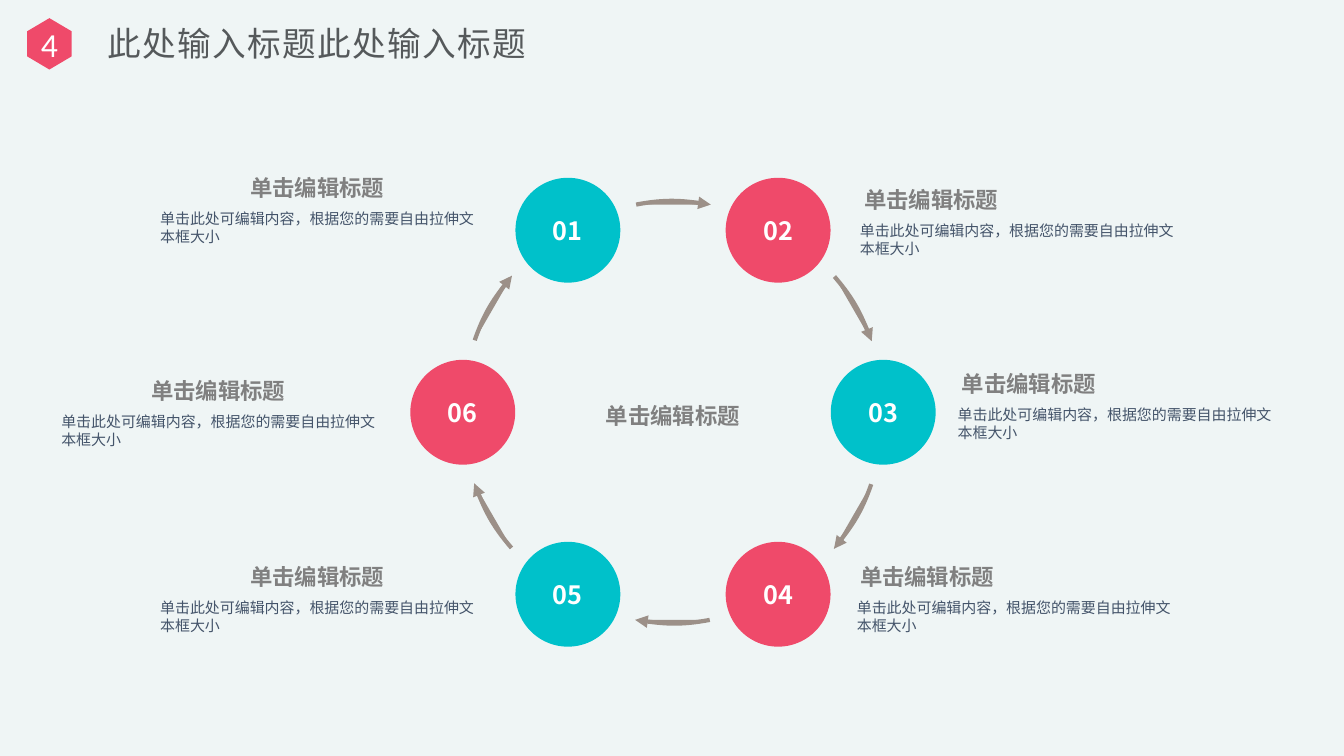
from math import cos, sin, radians
from pptx import Presentation
from pptx.dml.color import RGBColor
from pptx.enum.shapes import MSO_SHAPE as Preset
from pptx.enum.text import MSO_ANCHOR as Anchor, PP_ALIGN as Align
from pptx.oxml import parse_xml
from pptx.oxml.ns import nsdecls, qn
from pptx.util import Inches, Pt

WIDTH, HEIGHT = 13.33, 7.5
SANS = "Noto Sans CJK SC"
PAPER, RED, TEAL, TAUPE = "EFF5F5", "EF4A6A", "00C1CA", "9C9088"
DARK, GREY, NAVY, WHITE = "55595B", "808080", "44546A", "FFFFFF"

section = "4"
headline = "此处输入标题此处输入标题"
heading = "单击编辑标题"
detail = "单击此处可编辑内容，根据您的需要自由拉伸文本框大小"
steps = [
    ("01", TEAL, 1.49, 2.03, 0.86),
    ("02", RED, 8.43, 2.15, 0.01),
    ("03", TEAL, 9.4, 3.97, 0.01),
    ("04", RED, 8.4, 5.89, 0),
    ("05", TEAL, 1.49, 5.89, 0.86),
    ("06", RED, 0.51, 4.04, 0.86),
]
ring_x, ring_y, ring_radius, disc = WIDTH / 2 + 0.01, 4.09, 2.085, 1.04
turn = 360 / len(steps)
arrow_curve = [(-0.365, -2.06), (-0.055, -2.12), (0.255, -2.08), (0.375, -2.06)]
hexagon = [(0.49, 0.18), (0.71, 0.31), (0.71, 0.56),
           (0.49, 0.69), (0.27, 0.56), (0.27, 0.31)]

deck = Presentation()
deck.slide_width, deck.slide_height = Inches(WIDTH), Inches(HEIGHT)
slide = deck.slides.add_slide(deck.slide_layouts[6])
shapes = slide.shapes


def paint(target, color):
    target.solid()
    target.fore_color.rgb = RGBColor.from_string(color)


def write(shape, text, size, color, bold=False, font=SANS, align=Align.LEFT,
          anchor=Anchor.MIDDLE, insets=(0, 0, 0, 0)):
    frame = shape.text_frame
    frame.word_wrap = True
    frame.vertical_anchor = anchor
    (frame.margin_left, frame.margin_top,
     frame.margin_right, frame.margin_bottom) = map(Inches, insets)
    paragraph = frame.paragraphs[0]
    paragraph.alignment = align
    run = paragraph.add_run()
    run.text = text
    run.font.size, run.font.bold, run.font.name = Pt(size), bold, font
    run.font.color.rgb = RGBColor.from_string(color)
    return run


def box(x, y, w, h):
    return shapes.add_textbox(*map(Inches, (x, y, w, h)))


def outline(points, color, close):
    spots = [(Inches(x), Inches(y)) for x, y in points]
    builder = shapes.build_freeform(*spots[0])
    builder.add_line_segments(spots[1:], close=close)
    shape = builder.convert_to_shape()
    shape.shadow.inherit = False
    paint(shape.fill, color)
    shape.line.fill.background()
    return shape


def arrow(angle):
    c, s = cos(radians(angle)), sin(radians(angle))
    shape = outline([(ring_x + x * c - y * s, ring_y + x * s + y * c)
                     for x, y in arrow_curve], TAUPE, False)
    route = shape._element.spPr.find(".//" + qn("a:path"))
    curve = parse_xml(f"<a:cubicBezTo {nsdecls('a')}/>")
    for segment in route.findall(qn("a:lnTo")):
        curve.append(segment[0])
        route.remove(segment)
    route.append(curve)
    paint(shape.line.fill, TAUPE)
    shape.line.width = Pt(3)
    shape.line._get_or_add_ln().append(
        parse_xml(f'<a:tailEnd {nsdecls("a")} type="triangle"/>'))


paint(slide.background.fill, PAPER)
title = write(box(0.87, 0.13, 5.09, 0.59), headline, 24, DARK,
              insets=(0.2, 0.05, 0.1, 0.05))
title._r.get_or_add_rPr().set("spc", "100")
write(outline(hexagon, RED, True), section, 24, WHITE, font="Calibri", align=Align.CENTER)
write(box(ring_x - 1.145, ring_y - 1.11, 2.29, 2.29), heading, 16, GREY, True,
      align=Align.CENTER)

for index, (number, color, x, y, heading_shift) in enumerate(steps):
    arrow(index * turn)
    angle = radians(index * turn - 120)
    circle = shapes.add_shape(Preset.OVAL, *map(Inches, (
        ring_x + ring_radius * cos(angle) - disc / 2,
        ring_y + ring_radius * sin(angle) - disc / 2, disc, disc)))
    circle.shadow.inherit = False
    paint(circle.fill, color)
    circle.line.fill.background()
    write(circle, number, 18, WHITE, True, align=Align.CENTER)
    write(box(x, y, 3.42, 0.46), detail, 10.7, NAVY, anchor=Anchor.TOP,
          insets=(0.1, 0.05, 0.1, 0.05))
    write(box(x + heading_shift, y - 0.37, 2.55, 0.4), heading, 16, GREY, True,
          anchor=Anchor.TOP, insets=(0.13, 0.07, 0.13, 0.07))

deck.save("out.pptx")
